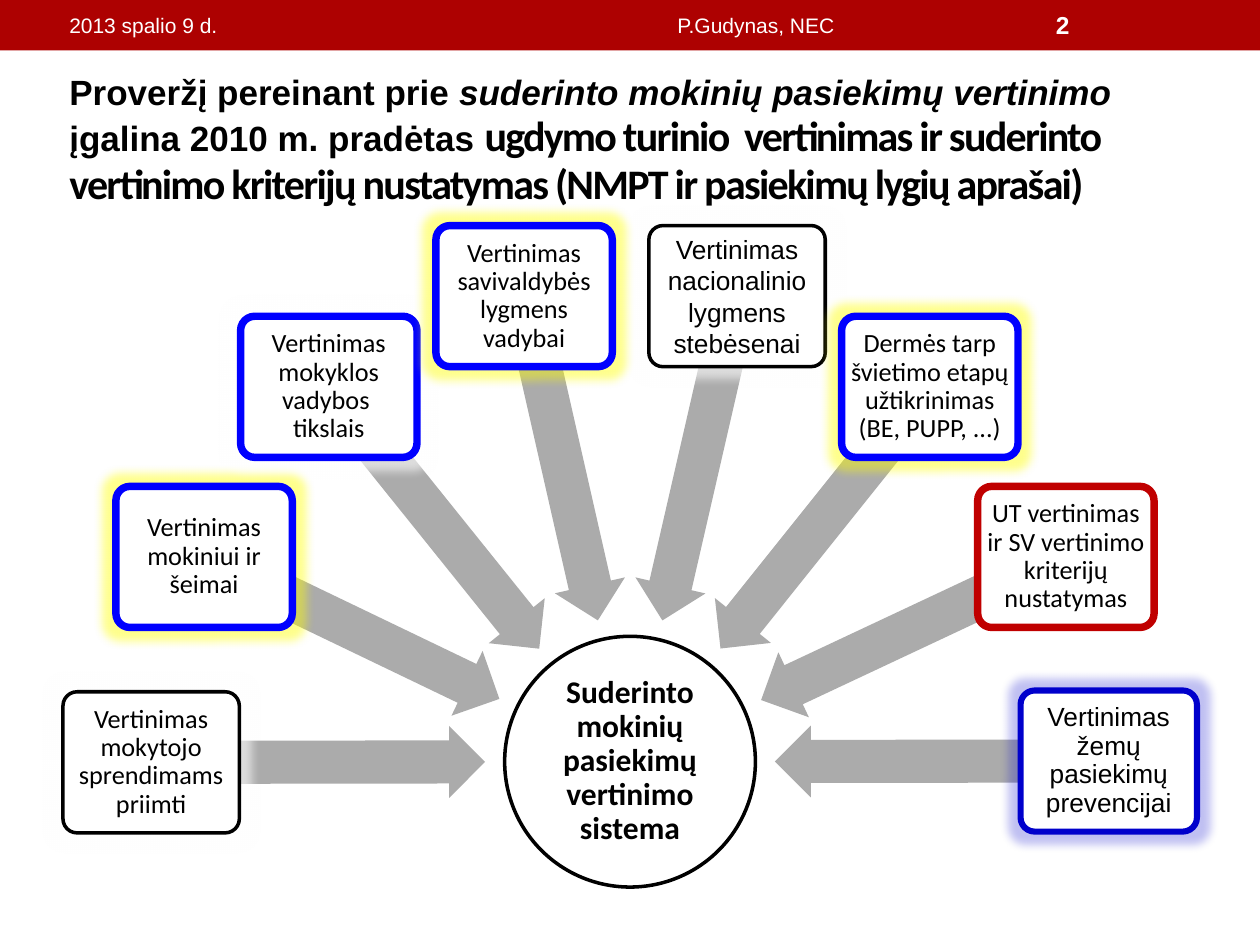
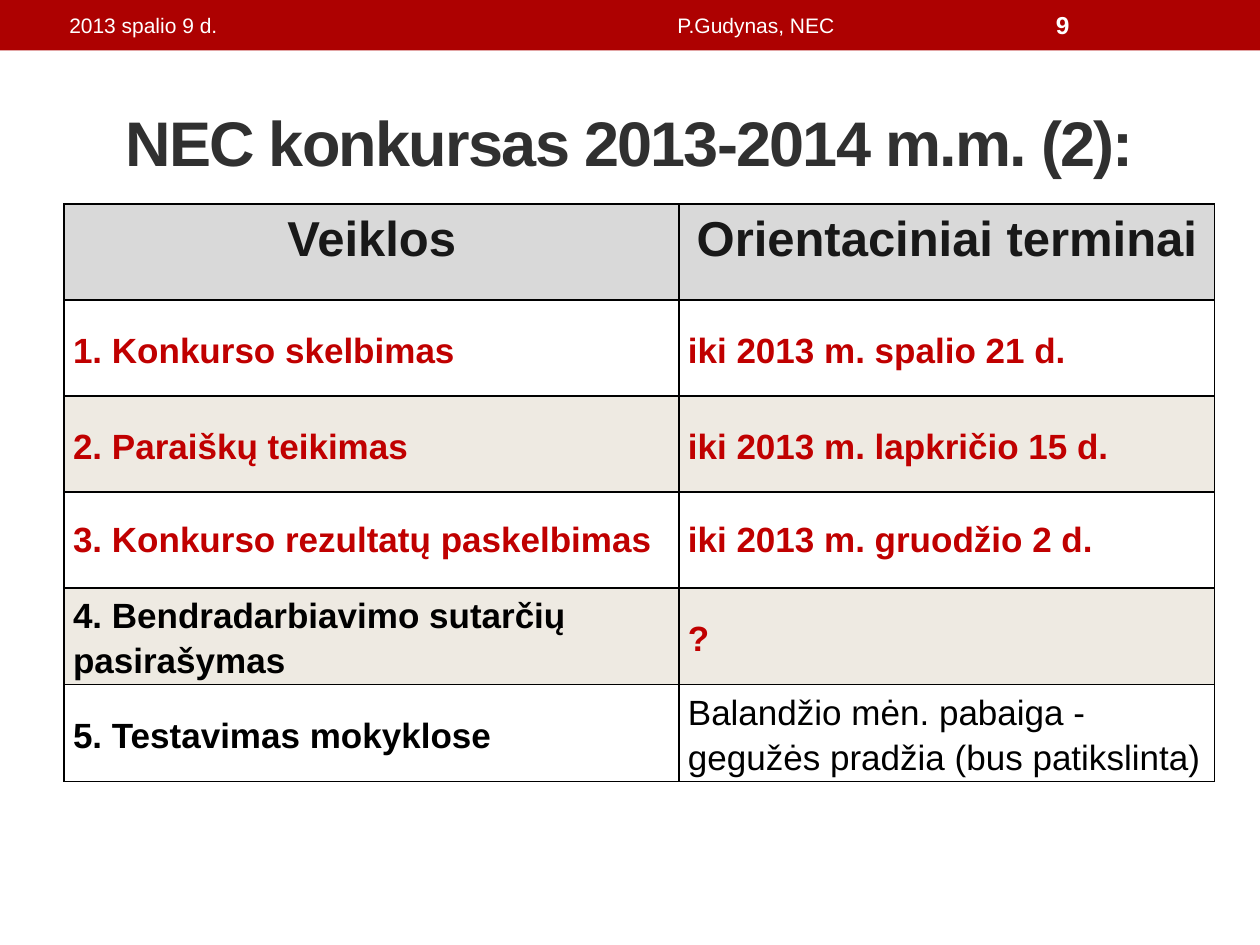
from math import atan2, degrees, hypot

from lxml import etree
from pptx import Presentation
from pptx.dml.color import RGBColor
from pptx.enum.shapes import MSO_SHAPE
from pptx.enum.text import MSO_ANCHOR, PP_ALIGN
from pptx.oxml.ns import qn
from pptx.util import Inches, Pt

BAND_RED = RGBColor(0xAD, 0x01, 0x01)
ACCENT_RED = RGBColor(0xC0, 0x00, 0x00)
BLUE = RGBColor(0x00, 0x00, 0xFF)
DARK_BLUE = RGBColor(0x00, 0x00, 0xCC)
YELLOW = RGBColor(0xFF, 0xFF, 0x00)
WHITE = RGBColor(0xFF, 0xFF, 0xFF)
BLACK = RGBColor(0x00, 0x00, 0x00)
TITLE_GREY = RGBColor(0x30, 0x30, 0x30)
HEADER_TEXT = RGBColor(0x18, 0x18, 0x18)
HEADER_FILL = RGBColor(0xD9, 0xD9, 0xD9)
STRIPE = RGBColor(0xEE, 0xEA, 0xE2)
ARROW_GREY = RGBColor(0xAB, 0xAB, 0xAB)

COLUMNS, ROWS = 100, 75
HUB_COLUMN, HUB_ROW, HUB_SIZE = 50, 60.45, 19.9
ARROW_GAP, ARROW_WIDTH = 11.5, 5.7
CARD_WIDTH, CARD_HEIGHT = 14, 11.2

PLAIN = (BLACK, 2, WHITE, 60)
LINKED = (BLUE, 4.25, YELLOW, 45)
CARDS = [
    (12, 60.5, "Vertinimas mokytojo sprendimams priimti", "Calibri", PLAIN),
    (16.2, 44.2, "Vertinimas mokiniui ir šeimai", "Calibri", LINKED),
    (26.1, 30.7, "Vertinimas mokyklos vadybos  tikslais", "Calibri", (BLUE, 4.25, WHITE, 60)),
    (41.6, 23.5, "Vertinimas savivaldybės lygmens vadybai", "Calibri", LINKED),
    (58.5, 23.5, "Vertinimas nacionalinio lygmens stebėsenai", "Arial", PLAIN),
    (73.8, 30.7, "Dermės tarp švietimo etapų užtikrinimas (BE, PUPP, ...)", "Calibri", LINKED),
    (84.6, 44.2, "UT vertinimas ir SV vertinimo kriterijų nustatymas", "Calibri",
     (ACCENT_RED, 4.25, None, 0)),
    (88, 60.4, "Vertinimas žemų pasiekimų prevencijai", "Arial", (DARK_BLUE, 3.5, DARK_BLUE, 25)),
]

ACTIVITIES = [
    ("Veiklos", "Orientaciniai terminai"),
    ("1. Konkurso skelbimas", "iki 2013 m. spalio 21 d."),
    ("2. Paraiškų teikimas", "iki 2013 m. lapkričio 15 d."),
    ("3. Konkurso rezultatų paskelbimas", "iki 2013 m. gruodžio 2 d."),
    ("4. Bendradarbiavimo sutarčių pasirašymas", "?"),
    ("5. Testavimas mokyklose", "Balandžio mėn. pabaiga - gegužės pradžia (bus patikslinta)"),
]


class Builder:
    def __init__(self):
        self.deck = Presentation()
        self.deck.slide_width = Inches(10)
        self.deck.slide_height = Inches(7.5)
        self.page = None

    def across(self, columns):
        return round(self.deck.slide_width * columns / COLUMNS)

    def down(self, rows):
        return round(self.deck.slide_height * rows / ROWS)

    def area(self, left, top, width, height):
        return self.across(left), self.down(top), self.across(width), self.down(height)

    def style(self, target, font, size, color, bold=False, italic=False):
        target.font.name = font
        target.font.size = Pt(size)
        target.font.color.rgb = color
        target.font.bold = bold
        target.font.italic = italic

    def fit_frame(self, frame, inset):
        frame.word_wrap = True
        frame.vertical_anchor = MSO_ANCHOR.MIDDLE
        frame.margin_left = frame.margin_right = self.across(inset)
        frame.margin_top = frame.margin_bottom = self.down(inset)

    def start_page(self, number):
        self.page = self.deck.slides.add_slide(self.deck.slide_layouts[5])
        self.shape(MSO_SHAPE.RECTANGLE, (0, 0, 100, 4), BAND_RED)
        self.label("2013 spalio 9 d.", 5, 31.7)
        self.label("P.Gudynas, NEC", 37.5, 45, align=PP_ALIGN.CENTER)
        self.label(number, 83.3, 11.7, size=14, bold=True)

    def label(self, text, left, width, size=12, bold=False, align=PP_ALIGN.LEFT):
        box = self.page.shapes.add_textbox(*self.area(left, 0.2, width, 3.6))
        self.fit_frame(box.text_frame, 0.5)
        para = box.text_frame.paragraphs[0]
        para.text = text
        para.alignment = align
        self.style(para, "Arial", size, WHITE, bold)

    def title(self, spans, align, line_spacing=1.0):
        box = self.page.shapes.title
        box.left, box.top, box.width, box.height = self.area(5, 5.8, 90, 10.8)
        self.fit_frame(box.text_frame, 0.5)
        para = box.text_frame.paragraphs[0]
        para.alignment = align
        para.line_spacing = line_spacing
        for text, font, size, color, italic, tracking in spans:
            span = para.add_run()
            span.text = text
            self.style(span, font, size, color, True, italic)
            if tracking:
                span.font._element.set("spc", str(tracking * 100))

    def shape(self, kind, place, fill, line=None, weight=0):
        item = self.page.shapes.add_shape(kind, *self.area(*place))
        item.shadow.inherit = False
        item.fill.solid()
        item.fill.fore_color.rgb = fill
        if line is None:
            item.line.fill.background()
        else:
            item.line.color.rgb = line
            item.line.width = Pt(weight)
        return item

    def centred_shape(self, kind, column, row, width, height, *paint):
        place = (column - width / 2, row - height / 2, width, height)
        return self.shape(kind, place, *paint)

    def caption(self, item, text, font, size, inset, bold=False, line_spacing=0.9):
        self.fit_frame(item.text_frame, inset)
        para = item.text_frame.paragraphs[0]
        para.text = text
        para.alignment = PP_ALIGN.CENTER
        para.line_spacing = line_spacing
        self.style(para, font, size, BLACK, bold)

    def glow(self, item, color, opacity):
        effects = item._element.spPr.find(qn("a:effectLst"))
        halo = etree.SubElement(effects, qn("a:glow"), rad=str(Pt(11)))
        tint = etree.SubElement(halo, qn("a:srgbClr"), val=str(color))
        etree.SubElement(tint, qn("a:alpha"), val=str(opacity * 1000))

    def hub(self, text):
        item = self.centred_shape(MSO_SHAPE.OVAL, HUB_COLUMN, HUB_ROW, HUB_SIZE, HUB_SIZE,
                                  WHITE, BLACK, 2)
        self.caption(item, text, "Calibri", 18, 0.1, bold=True)

    def arrow_to_hub(self, column, row):
        run, rise = column - HUB_COLUMN, row - HUB_ROW
        distance = hypot(run, rise)
        share = (distance + ARROW_GAP) / 2 / distance
        item = self.centred_shape(MSO_SHAPE.LEFT_ARROW, HUB_COLUMN + run * share,
                                  HUB_ROW + rise * share, distance - ARROW_GAP,
                                  ARROW_WIDTH, ARROW_GREY)
        item.adjustments[0] = 0.6
        item.adjustments[1] = 0.5
        item.rotation = degrees(atan2(rise, run)) % 360

    def card(self, column, row, text, font, look):
        line, weight, halo, opacity = look
        item = self.centred_shape(MSO_SHAPE.ROUNDED_RECTANGLE, column, row,
                                  CARD_WIDTH, CARD_HEIGHT, WHITE, line, weight)
        item.adjustments[0] = 0.1
        if halo is not None:
            self.glow(item, halo, opacity)
        spacing = 1.0 if font == "Arial" and look is PLAIN else 0.9
        self.caption(item, text, font, 15, 0.3, line_spacing=spacing)

    def table(self, place, widths, rows):
        grid = self.page.shapes.add_table(len(rows), len(widths), *self.area(*place)).table
        for column, width in zip(grid.columns, widths):
            column.width = self.across(width)
        for row_index, texts in enumerate(rows):
            for column_index, text in enumerate(texts):
                self.cell(grid.cell(row_index, column_index), text, row_index, column_index)

    def cell(self, cell, text, row, column):
        header = row == 0
        cell.fill.solid()
        cell.fill.fore_color.rgb = HEADER_FILL if header else WHITE if row % 2 else STRIPE
        cell.margin_left = cell.margin_right = self.across(0.7)
        cell.margin_top = cell.margin_bottom = 0
        cell.vertical_anchor = MSO_ANCHOR.TOP if header else MSO_ANCHOR.MIDDLE
        para = cell.text_frame.paragraphs[0]
        para.text = text
        para.alignment = PP_ALIGN.CENTER if header else PP_ALIGN.LEFT
        para.line_spacing = 1.0 if row == 3 else 1.15
        plain = row == 5 or (row == 4 and column == 0)
        color = HEADER_TEXT if header else BLACK if plain else ACCENT_RED
        self.style(para, "Arial", 28 if header else 20, color, (row, column) != (5, 1))
        self.borders(cell)

    def borders(self, cell):
        properties = cell._tc.get_or_add_tcPr()
        for index, side in enumerate(("lnL", "lnR", "lnT", "lnB")):
            line = etree.Element(qn(f"a:{side}"), w=str(Pt(1)))
            fill = etree.SubElement(line, qn("a:solidFill"))
            etree.SubElement(fill, qn("a:srgbClr"), val=str(BLACK))
            properties.insert(index, line)


def build_assessment_system(builder):
    builder.start_page("2")
    builder.title([
        ("Proveržį pereinant prie ", "Arial", 20, BLACK, False, 0),
        ("suderinto mokinių pasiekimų vertinimo ", "Arial", 20, BLACK, True, 0),
        ("įgalina 2010 m. pradėtas ", "Arial", 20, BLACK, False, 0),
        ("ugdymo turinio  vertinimas ir suderinto vertinimo kriterijų nustatymas "
         "(NMPT ir pasiekimų lygių aprašai)", "Calibri", 24, BLACK, False, -1),
    ], PP_ALIGN.LEFT, 0.95)
    builder.hub("Suderinto mokinių pasiekimų vertinimo sistema")
    for column, row, text, font, look in CARDS:
        builder.arrow_to_hub(column, row)
        builder.card(column, row, text, font, look)


def build_competition_schedule(builder):
    builder.start_page("9")
    builder.title([("NEC konkursas 2013-2014 m.m. (2):", "Arial", 36, TITLE_GREY, False, -1)],
                  PP_ALIGN.CENTER)
    builder.table((5.1, 16.2, 91.3, 45.7), (48.8, 42.5), ACTIVITIES)


def main():
    builder = Builder()
    build_assessment_system(builder)
    build_competition_schedule(builder)
    builder.deck.save("out.pptx")


if __name__ == "__main__":
    main()
